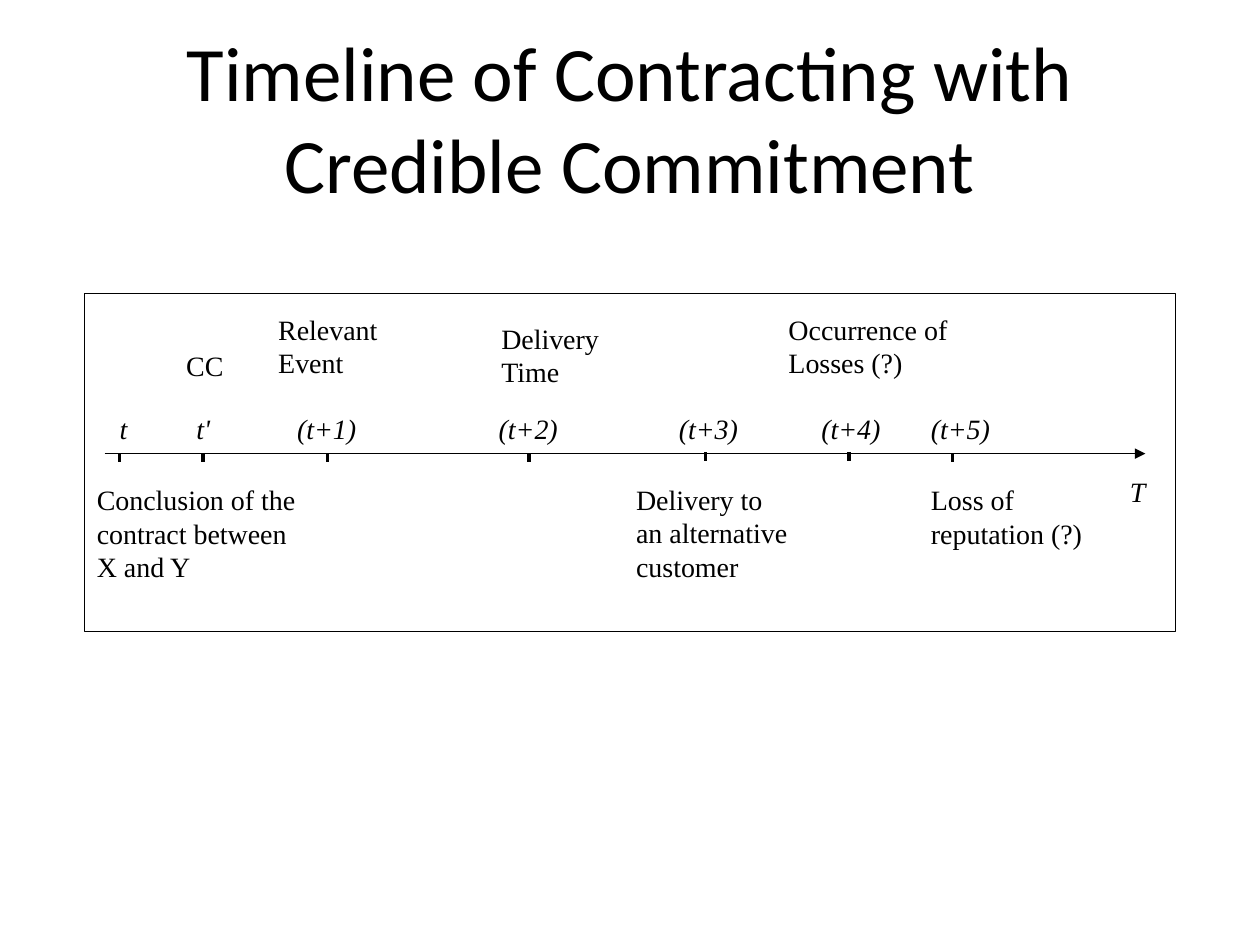
from lxml import etree
from pptx import Presentation
from pptx.dml.color import RGBColor
from pptx.enum.shapes import MSO_CONNECTOR, MSO_SHAPE
from pptx.enum.text import MSO_ANCHOR, PP_ALIGN
from pptx.oxml.ns import qn
from pptx.util import Pt

BLACK = RGBColor(0, 0, 0)
WHITE = RGBColor(255, 255, 255)
STRAIGHT = MSO_CONNECTOR.STRAIGHT
RECTANGLE = MSO_SHAPE.RECTANGLE
CENTER = PP_ALIGN.CENTER
TOP, MIDDLE = MSO_ANCHOR.TOP, MSO_ANCHOR.MIDDLE

CELL = 9144
COLS, ROWS = 1000, 750
TITLE_BOX = (50, 30, 900, 125)
TIMELINE_BOX = (67, 233, 866, 268)

AXIS_ROW, AXIS_START, AXIS_END = 127, 16, 842
LABEL_ROW, LABEL_HEIGHT, TICK_LENGTH = 89, 43, 7
MOMENTS = [
    ("t", 28, 0, 18, 42),
    ("t'", 94, 0, 79, 42),
    ("(t+1)", 193, 0, 159, 87),
    ("(t+2)", 353, 0, 319, 87),
    ("(t+3)", 493, -1, 462, 87),
    ("(t+4)", 607, -1, 575, 87),
    ("(t+5)", 689, 0, 662, 87),
]
EVENTS = [
    ("Conclusion of the contract between X and Y", 0, 145, 179, 112),
    ("Delivery to an alternative customer", 428, 145, 142, 97),
    ("Loss of reputation (?)", 662, 145, 151, 79),
    ("СС", 71, 39, 73, 57),
    ("Relevant Event", 144, 10, 118, 79),
    ("Delivery Time", 321, 17, 108, 79),
    ("Occurrence of Losses (?)", 549, 10, 147, 79),
]


def grid(*cells):
    return [cell * CELL for cell in cells]


def add_text(slide, box, text, size=16, font="Times New Roman",
             italic=False, align=None, anchor=TOP):
    tf = slide.shapes.add_textbox(*grid(*box)).text_frame
    tf.word_wrap = True
    tf.vertical_anchor = anchor
    p = tf.paragraphs[0]
    p.text = text
    p.alignment = align
    p.font.size = Pt(size)
    p.font.name = font
    p.font.italic = italic
    p.font.color.rgb = BLACK


def add_line(slide, x1, y1, x2, y2, width, arrow=False):
    line = slide.shapes.add_connector(STRAIGHT, *grid(x1, y1, x2, y2))
    line.line.color.rgb = BLACK
    line.line.width = Pt(width)
    if arrow:
        ln = line.line._get_or_add_ln()
        etree.SubElement(ln, qn("a:tailEnd"), type="triangle")
    etree.SubElement(line._element.spPr, qn("a:effectLst"))


def add_title(slide, box):
    add_text(slide, box, "Timeline of Contracting with Credible Commitment",
             size=44, font="Calibri", align=CENTER, anchor=MIDDLE)


def add_timeline(slide, box):
    left, top, width, height = box
    frame = slide.shapes.add_shape(RECTANGLE, *grid(*box))
    frame.shadow.inherit = False
    frame.fill.solid()
    frame.fill.fore_color.rgb = WHITE
    frame.line.color.rgb = BLACK
    frame.line.width = Pt(0.5)

    for text, x, y, w, h in EVENTS:
        add_text(slide, (left + x, top + y, w, h), text)

    axis = top + AXIS_ROW
    add_line(slide, left + AXIS_START, axis, left + AXIS_END, axis, 0.75, arrow=True)
    add_text(slide, (left + width - 46, axis + 12, 46, LABEL_HEIGHT), "T", italic=True)

    for text, tick, shift, x, w in MOMENTS:
        add_text(slide, (left + x, top + LABEL_ROW, w, LABEL_HEIGHT), text, italic=True)
        start = axis + shift
        add_line(slide, left + tick, start, left + tick, start + TICK_LENGTH, 2)


def main():
    prs = Presentation()
    prs.slide_width, prs.slide_height = grid(COLS, ROWS)
    slide = prs.slides.add_slide(prs.slide_layouts[6])
    add_title(slide, TITLE_BOX)
    add_timeline(slide, TIMELINE_BOX)
    prs.save("out.pptx")


if __name__ == "__main__":
    main()
